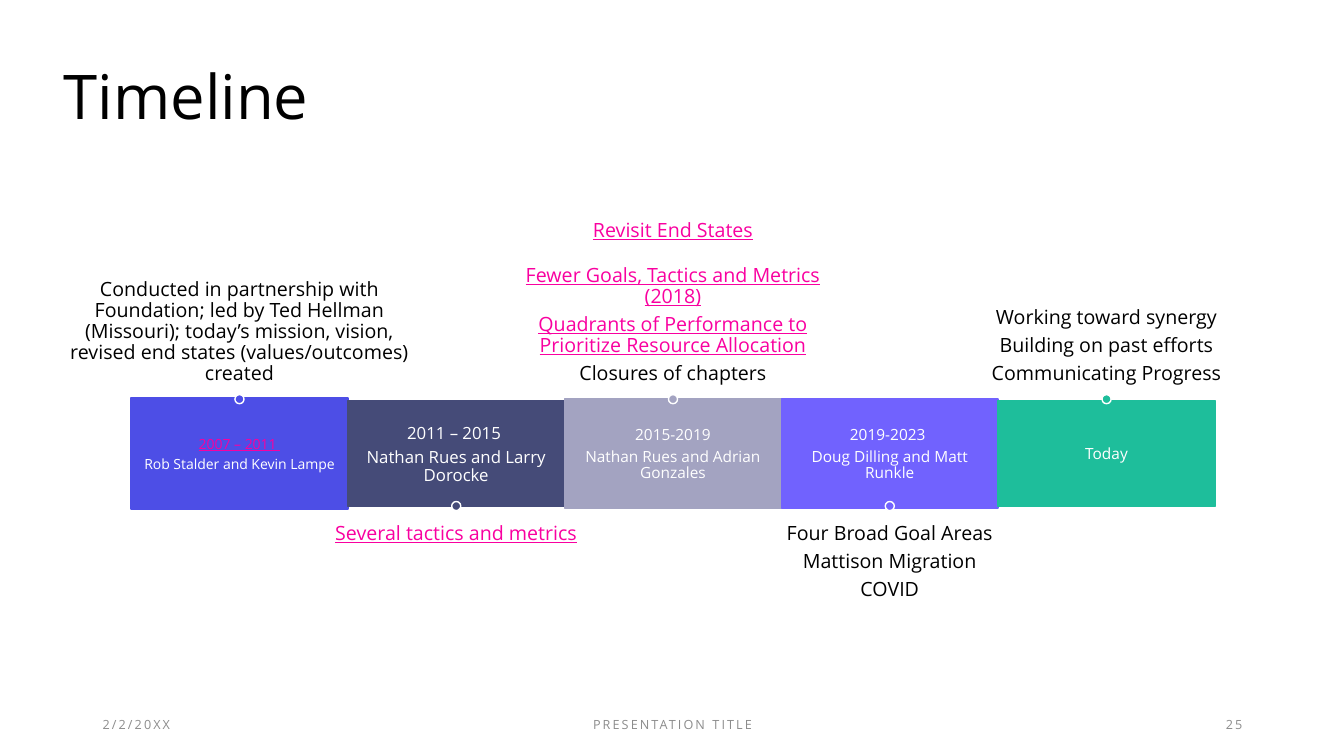
from lxml.etree import SubElement
from pptx import Presentation
from pptx.dml.color import RGBColor
from pptx.enum.dml import MSO_LINE
from pptx.enum.shapes import MSO_CONNECTOR, MSO_SHAPE
from pptx.enum.text import MSO_ANCHOR, PP_ALIGN
from pptx.oxml.ns import qn
from pptx.util import Inches, Pt

BLACK = RGBColor(0x00, 0x00, 0x00)
WHITE = RGBColor(0xFF, 0xFF, 0xFF)
GRAY = RGBColor(0x8C, 0x8C, 0x8C)
PINK = RGBColor(0xF9, 0x00, 0xA0)
BLUE = RGBColor(0x4D, 0x4E, 0xE6)
NAVY = RGBColor(0x45, 0x4B, 0x78)
LAVENDER = RGBColor(0xA3, 0xA3, 0xC1)
VIOLET = RGBColor(0x71, 0x62, 0xFE)
GREEN = RGBColor(0x1E, 0xBE, 0x9B)

# Timeline grid, in inches: equal columns around one horizontal axis
GRID_LEFT, COLUMN, AXIS = 1.3, 2.15, 4.49
LABEL_NEAR, LABEL_HEIGHT = 0.66, 1.53
STEM_NEAR, STEM_FAR, DOT_OFFSET, DOT = 0.21, 0.57, 0.53, 0.09

# Colour, box height, size, box lines, label side (-1 above, 1 below),
# label width, label lines; a line is (text, is pink, points after)
PERIODS = [
    (BLUE, 1.1, 10,
     [("2007 – 2011 ", True, 3.5), ("Rob Stalder and Kevin Lampe", False, 0)],
     -1, 3.58,
     [("Conducted in partnership with Foundation; led by Ted Hellman (Missouri); "
       "today’s mission, vision, revised end states (values/outcomes) created", False, 0)]),
    (NAVY, 1.05, 12,
     [("2011 – 2015 ", False, 4.2), ("Nathan Rues and Larry Dorocke", False, 0)],
     1, 3.29, [("Several tactics and metrics", True, 0)]),
    (LAVENDER, 1.08, 11,
     [("2015-2019", False, 3.9), ("Nathan Rues and Adrian Gonzales", False, 0)],
     -1, 3.58,
     [("Revisit End States", True, 17),
      ("Fewer Goals, Tactics and Metrics (2018)", True, 5),
      ("Quadrants of Performance to Prioritize Resource Allocation", True, 5),
      ("Closures of chapters", False, 0)]),
    (VIOLET, 1.08, 11,
     [("2019-2023 ", False, 3.9), ("Doug Dilling and Matt Runkle", False, 0)],
     1, 3.58,
     [("Four Broad Goal Areas", False, 5), ("Mattison Migration", False, 5),
      ("COVID", False, 0)]),
    (GREEN, 1.05, 11, [("Today", False, 0)],
     -1, 3.58,
     [("Working toward synergy", False, 5), ("Building on past efforts", False, 5),
      ("Communicating Progress", False, 0)]),
]


class TimelineSlide:
    """Holds the style and the slide being drawn."""

    font = "Open Sans"
    leading = 1.07

    def __init__(self, deck):
        self.slide = deck.slides.add_slide(deck.slide_layouts[6])
        self.shapes = self.slide.shapes
        self.width, self.height = deck.slide_width, deck.slide_height

    def center(self, column):
        return GRID_LEFT + (column + 0.5) * COLUMN

    def add_lines(self, shape, lines, size, color, anchor, align, insets, spacing=0):
        frame = shape.text_frame
        frame.word_wrap = True
        frame.vertical_anchor = anchor
        (frame.margin_left, frame.margin_top,
         frame.margin_right, frame.margin_bottom) = map(Inches, insets)
        for index, (text, is_pink, after) in enumerate(lines):
            para = frame.paragraphs[0] if index == 0 else frame.add_paragraph()
            para.alignment = align
            para.line_spacing = Pt(round(size * self.leading, 1))
            para.space_after = Pt(after)
            span = para.add_run()
            span.text = text
            span.font.name = self.font
            span.font.size = Pt(size)
            span.font.color.rgb = PINK if is_pink else color
            span.font.underline = is_pink
            if spacing:
                span.font._element.set("spc", str(spacing))

    def solid(self, kind, left, top, width, height, fill, line):
        shape = self.shapes.add_shape(kind, *map(Inches, (left, top, width, height)))
        shape.shadow.inherit = False
        shape.fill.solid()
        shape.fill.fore_color.rgb = fill
        shape.line.color.rgb = line
        shape.line.width = Pt(1)
        return shape

    def page_text(self, text, left, top, width, height, size, color, anchor, align, spacing=0):
        """Place one line of text by shares of the slide's size."""
        box = self.shapes.add_textbox(int(self.width * left), int(self.height * top),
                                      int(self.width * width), int(self.height * height))
        self.add_lines(box, [(text, False, 0)], size, color, anchor, align,
                       (0.1, 0.05, 0.1, 0.05), spacing)

    def period(self, column, color, height, size, lines):
        box = self.solid(MSO_SHAPE.RECTANGLE, GRID_LEFT + column * COLUMN,
                         AXIS + 0.01 - height / 2, COLUMN, height, color, color)
        self.add_lines(box, lines, size, WHITE, MSO_ANCHOR.MIDDLE, PP_ALIGN.CENTER,
                       (0.04, 0.02, 0.04, 0))

    def label(self, column, side, width, lines):
        top = AXIS + LABEL_NEAR if side > 0 else AXIS - LABEL_NEAR - LABEL_HEIGHT
        box = self.shapes.add_textbox(*map(Inches, (
            self.center(column) - width / 2, top, width, LABEL_HEIGHT)))
        anchor = MSO_ANCHOR.TOP if side > 0 else MSO_ANCHOR.BOTTOM
        self.add_lines(box, lines, 14, BLACK, anchor, PP_ALIGN.CENTER,
                       (0.06, 0.04, 0.06, 0.02))

    def marker(self, column, side, color):
        x = self.center(column)
        stem = self.shapes.add_connector(MSO_CONNECTOR.STRAIGHT, *map(Inches, (
            x, AXIS + side * STEM_NEAR, x, AXIS + side * STEM_FAR)))
        stem.line.color.rgb = color
        stem.line.width = Pt(1)
        stem.line.dash_style = MSO_LINE.DASH
        SubElement(stem._element.spPr, qn("a:effectLst"))
        self.solid(MSO_SHAPE.OVAL, x - DOT / 2, AXIS + side * DOT_OFFSET - DOT / 2,
                   DOT, DOT, color, WHITE)


def main():
    deck = Presentation()
    deck.slide_width, deck.slide_height = Inches(13.33), Inches(7.5)
    page = TimelineSlide(deck)

    # Title
    page.page_text("Timeline", 0.04, 0.08, 0.92, 0.12, 44, BLACK,
                   MSO_ANCHOR.TOP, PP_ALIGN.LEFT)

    # Footer
    for text, left, width, align in (
            ("2/2/20XX", 0.92, 3, PP_ALIGN.LEFT),
            ("PRESENTATION TITLE", 4.42, 4.5, PP_ALIGN.CENTER),
            ("25", 9.42, 3, PP_ALIGN.RIGHT)):
        page.page_text(text, left / 13.33, 7 / 7.5, width / 13.33, 0.4 / 7.5, 9, GRAY,
                       MSO_ANCHOR.MIDDLE, align, spacing=150)

    # Timeline
    for column, (color, height, size, lines, side, width, notes) in enumerate(PERIODS):
        page.period(column, color, height, size, lines)
        page.label(column, side, width, notes)
        page.marker(column, side, color)

    deck.save("out.pptx")


if __name__ == "__main__":
    main()
